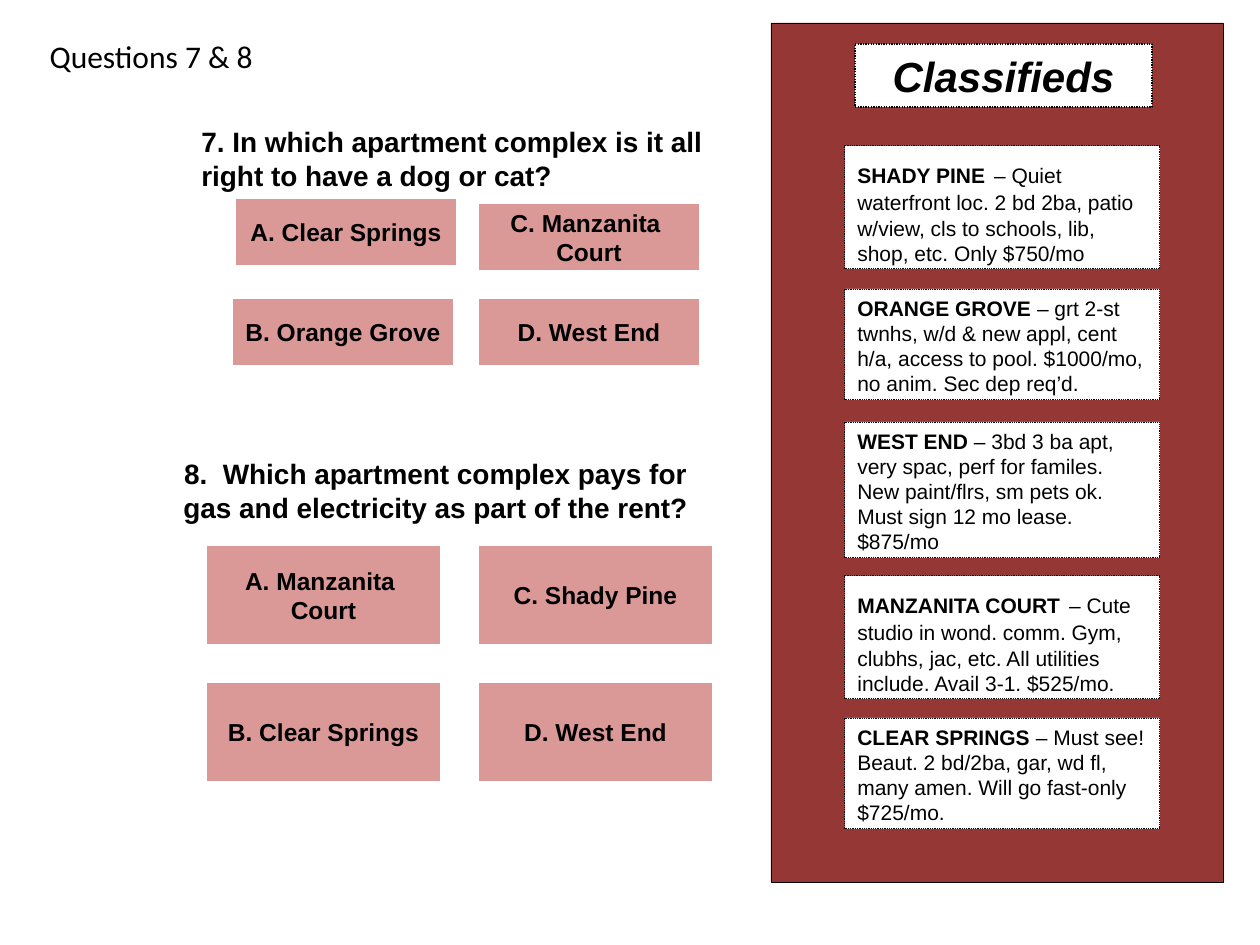
from dataclasses import dataclass

from pptx import Presentation
from pptx.dml.color import RGBColor as Rgb
from pptx.enum.dml import MSO_LINE as Dash
from pptx.enum.shapes import MSO_SHAPE as Kind
from pptx.enum.text import MSO_ANCHOR as Anchor, MSO_AUTO_SIZE as Fit, PP_ALIGN as Align
from pptx.util import Emu, Pt

SCALE = 914400 / 126


@dataclass(frozen=True)
class Theme:
    ink: str = "000000"
    paper: str = "FFFFFF"
    panel: str = "953735"
    button: str = "DA9896"
    head: str = "Calibri"
    body: str = "Arial"
    title: int = 18
    banner: int = 24
    ask: int = 16
    answer: int = 14
    ad: int = 12
    gap: int = 18


THEME = Theme()

ADS = [
    (146, 123, "SHADY PINE", " ", "– Quiet waterfront loc. 2 bd 2ba, patio w/view, "
     "cls to schools, lib, shop, etc. Only $750/mo"),
    (289, 111, "ORANGE GROVE", "", " – grt 2-st twnhs, w/d & new appl, cent h/a, "
     "access to pool. $1000/mo, no anim. Sec dep req’d."),
    (422, 136, "WEST END", "", " – 3bd 3 ba apt, very spac, perf for familes. "
     "New paint/flrs, sm pets ok. Must sign 12 mo lease. $875/mo"),
    (576, 123, "MANZANITA COURT", " ", "– Cute studio in wond. comm. Gym, clubhs, "
     "jac, etc. All utilities include. Avail 3-1. $525/mo."),
    (718, 111, "CLEAR SPRINGS", "", " – Must see! Beaut. 2 bd/2ba, gar, wd fl, "
     "many amen. Will go fast-only $725/mo."),
]

ASK_7 = ["7. In which apartment complex is it all", "right to have a dog or cat?"]
ASK_8 = ["8.  Which apartment complex pays for ", "gas and electricity as part of the rent? "]

PICKS_7 = [
    (236, 199, ["A. Clear Springs"]),
    (233, 299, ["B. Orange Grove"]),
    (479, 204, ["C. Manzanita ", "Court"]),
    (479, 299, ["D. West End"]),
]
PICKS_8 = [
    (207, 546, ["A. Manzanita ", "Court"]),
    (207, 683, ["B. Clear Springs"]),
    (479, 546, ["C. Shady Pine"]),
    (479, 683, ["D. West End"]),
]


def px(n):
    return Emu(round(n * SCALE))


def add_run(para, text, size, bold=False, slant=False, face=THEME.body):
    run = para.add_run()
    run.text = text
    font = run.font
    font.name, font.size = face, Pt(size)
    font.bold, font.italic = bold, slant
    font.color.rgb = Rgb.from_string(THEME.ink)


def add_lines(frame, lines, size, align):
    frame.word_wrap = False
    frame.vertical_anchor = Anchor.MIDDLE
    for i, line in enumerate(lines):
        para = frame.add_paragraph() if i else frame.paragraphs[0]
        para.alignment = align
        add_run(para, line, size, bold=True)


def add_box(shapes, kind, rect, fill, line=None, dash=None):
    box = shapes.add_shape(kind, *map(px, rect))
    box.shadow.inherit = False
    box.fill.solid()
    box.fill.fore_color.rgb = Rgb.from_string(fill)
    if line is None:
        box.line.fill.background()
    else:
        box.line.color.rgb = Rgb.from_string(THEME.ink)
        box.line.width = Pt(line)
        if dash:
            box.line.dash_style = dash
    return box


def add_note(shapes, rect, line, align):
    box = add_box(shapes, Kind.RECTANGLE, rect, THEME.paper, line, Dash.ROUND_DOT)
    frame = box.text_frame
    frame.word_wrap = True
    frame.auto_size = Fit.SHAPE_TO_FIT_TEXT
    frame.vertical_anchor = Anchor.TOP
    para = frame.paragraphs[0]
    para.alignment = align
    return para


def add_title(slide, text):
    title = slide.shapes.title
    title.left, title.top, title.width, title.height = map(px, (37, 31, 231, 51))
    frame = title.text_frame
    frame.word_wrap = True
    frame.auto_size = Fit.SHAPE_TO_FIT_TEXT
    frame.vertical_anchor = Anchor.TOP
    para = frame.paragraphs[0]
    para.alignment = Align.LEFT
    add_run(para, text, THEME.title, face=THEME.head)


def add_panel(slide):
    shapes = slide.shapes.add_group_shape().shapes
    add_box(shapes, Kind.RECTANGLE, (771, 23, 452, 859), THEME.panel, 0.25)
    para = add_note(shapes, (855, 44, 297, 63), 0.75, Align.CENTER)
    add_run(para, "Classifieds", THEME.banner, bold=True, slant=True)
    for top, height, name, gap, text in ADS:
        para = add_note(shapes, (845, top, 315, height), 0.5, Align.LEFT)
        add_run(para, name, THEME.ad, bold=True)
        if gap:
            add_run(para, gap, THEME.gap)
        add_run(para, text, THEME.ad)


def add_ask(slide, left, top, lines, align):
    box = slide.shapes.add_textbox(*map(px, (left, top, 557, 53)))
    add_lines(box.text_frame, lines, THEME.ask, align)


def add_picks(slide, picks, width, height, hang=0):
    for left, top, lines in picks:
        box = add_box(slide.shapes, Kind.ACTION_BUTTON_CUSTOM,
                      (left, top, width, height), THEME.button)
        add_lines(box.text_frame, lines, THEME.answer, Align.CENTER)
        if hang and len(lines) > 1:
            for para in box.text_frame.paragraphs:
                props = para._p.get_or_add_pPr()
                props.set("marL", str(px(hang)))
                props.set("indent", str(px(-hang)))


def main():
    deck = Presentation()
    deck.slide_width, deck.slide_height = px(1260), px(945)
    slide = deck.slides.add_slide(deck.slide_layouts[5])
    add_title(slide, "Questions 7 & 8")
    add_panel(slide)
    add_ask(slide, 189, 132, ASK_7, Align.LEFT)
    add_picks(slide, PICKS_7, 220, 66)
    add_ask(slide, 161, 464, ASK_8, Align.CENTER)
    add_picks(slide, PICKS_8, 233, 98, hang=48)
    deck.save("out.pptx")


if __name__ == "__main__":
    main()
